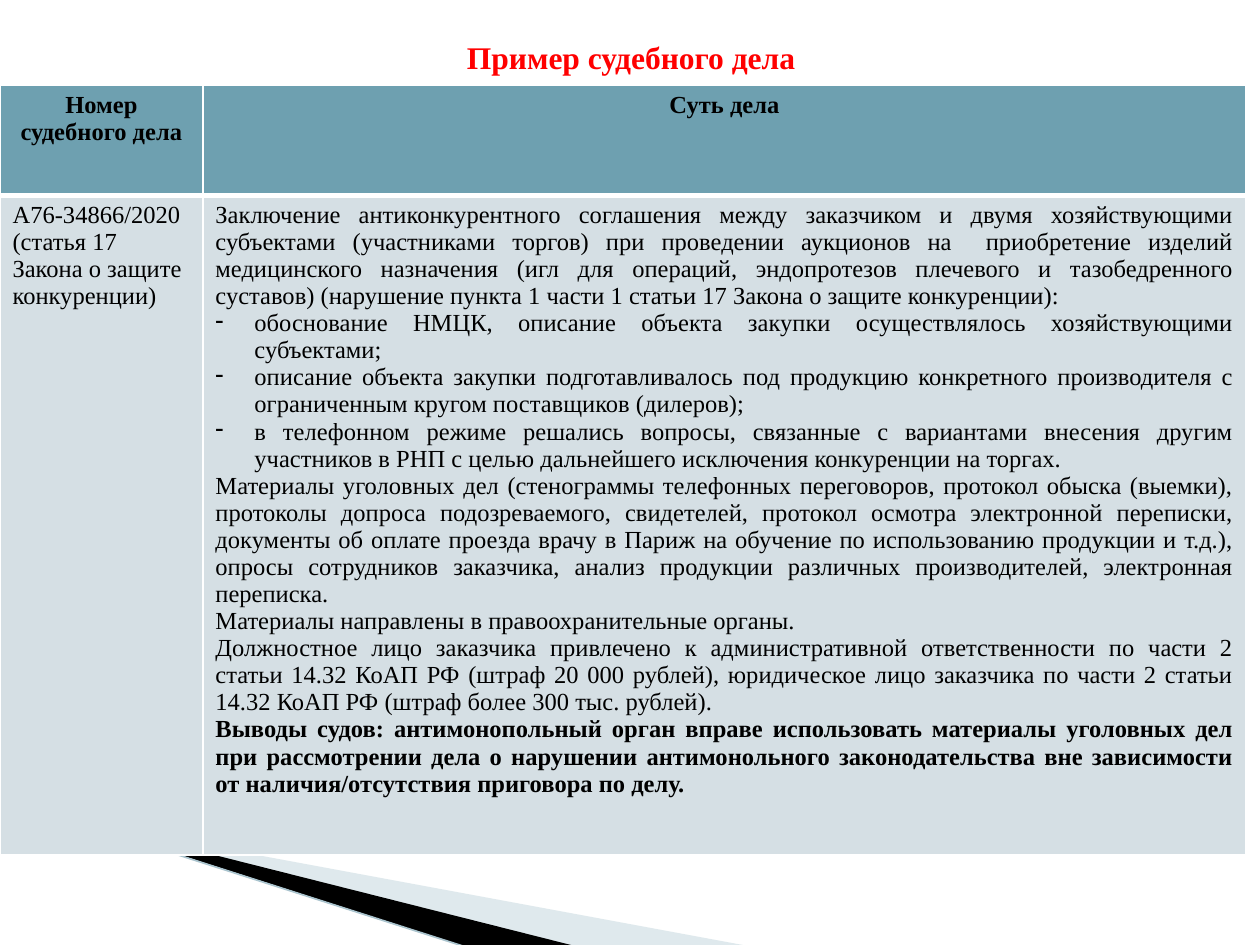
from lxml.etree import SubElement
from pptx import Presentation
from pptx.dml.color import RGBColor
from pptx.enum.shapes import MSO_CONNECTOR
from pptx.enum.text import MSO_ANCHOR, PP_ALIGN
from pptx.oxml.ns import qn
from pptx.util import Inches, Pt

FONT = "Times New Roman"
COLORS = {
    "title": "FF0000",
    "text": "000000",
    "header": "6EA0B0",
    "body": "D5DFE4",
    "border": "FFFFFF",
    "pale_ray": "B1C9D2",
    "dark_ray": "000000",
    "edge": "AAC4CE",
}

HEADERS = ["Номер судебного дела", "Суть дела"]
CASE_NUMBER = ["А76-34866/2020", "(статья 17 Закона о защите конкуренции)"]
CASE_INTRO = [
    "Заключение антиконкурентного соглашения между заказчиком и двумя хозяйствующими субъектами "
    "(участниками торгов) при проведении аукционов на  приобретение изделий медицинского назначения "
    "(игл для операций, эндопротезов плечевого и тазобедренного суставов) "
    "(нарушение пункта 1 части 1 статьи 17 Закона о защите конкуренции):",
]
CASE_POINTS = [
    "обоснование НМЦК, описание объекта закупки осуществлялось хозяйствующими субъектами;",
    "описание объекта закупки подготавливалось под продукцию конкретного производителя "
    "с ограниченным кругом поставщиков (дилеров);",
    "в телефонном режиме решались вопросы, связанные с вариантами внесения другим участников в РНП "
    "с целью дальнейшего исключения конкуренции на торгах.",
]
CASE_EVIDENCE = [
    "Материалы уголовных дел (стенограммы телефонных переговоров, протокол обыска (выемки), "
    "протоколы допроса подозреваемого, свидетелей, протокол осмотра электронной переписки, "
    "документы об оплате проезда врачу в Париж на обучение по использованию продукции и т.д.), "
    "опросы сотрудников заказчика, анализ продукции различных производителей, электронная переписка.",
    "Материалы направлены в правоохранительные органы.",
    "Должностное лицо заказчика привлечено к административной ответственности по части 2 "
    "статьи 14.32 КоАП РФ (штраф 20 000 рублей), юридическое лицо заказчика по части 2 "
    "статьи 14.32 КоАП РФ (штраф более 300 тыс. рублей).",
]
CASE_CONCLUSION = [
    "Выводы судов: антимонопольный орган вправе использовать материалы уголовных дел "
    "при рассмотрении дела о нарушении антимонольного законодательства вне зависимости "
    "от наличия/отсутствия приговора по делу.",
]


def rgb(name):
    return RGBColor.from_string(COLORS[name])


def add_paragraphs(text_frame, texts, size=14, color="text", bold=False,
                   align=PP_ALIGN.LEFT, bullet=None):
    for text in texts:
        paragraph = text_frame.paragraphs[-1]
        if paragraph.runs:
            paragraph = text_frame.add_paragraph()
        paragraph.alignment = align
        if bullet:
            properties = paragraph._p.get_or_add_pPr()
            properties.set("marL", str(Inches(0.31)))
            properties.set("indent", str(-Inches(0.31)))
            SubElement(properties, qn("a:buFontTx"))
            SubElement(properties, qn("a:buChar"), char=bullet)
        run = paragraph.add_run()
        run.text = text
        run.font.name = FONT
        run.font.size = Pt(size)
        run.font.bold = bold
        run.font.color.rgb = rgb(color)


def add_ray(slide, points, color, opacity=100):
    corners = [(Inches(x), Inches(y)) for x, y in points]
    builder = slide.shapes.build_freeform(*corners[0])
    builder.add_line_segments(corners[1:], close=True)
    shape = builder.convert_to_shape()
    shape.shadow.inherit = False
    shape.line.fill.background()
    shape.fill.solid()
    shape.fill.fore_color.rgb = rgb(color)
    if opacity < 100:
        color_element = shape._element.spPr.find(f"{qn('a:solidFill')}/{qn('a:srgbClr')}")
        SubElement(color_element, qn("a:alpha"), val=str(opacity * 1000))


def add_edge(slide, start, end):
    connector = slide.shapes.add_connector(
        MSO_CONNECTOR.STRAIGHT, *[Inches(value) for value in start + end])
    connector.line.color.rgb = rgb("edge")
    connector.line.width = Pt(0.95)
    SubElement(connector._element.spPr, qn("a:effectLst"))


def add_title(slide, text):
    box = slide.shapes.add_textbox(Inches(0.51), Inches(0.02), Inches(9), Inches(0.61))
    frame = box.text_frame
    frame.word_wrap = True
    frame.vertical_anchor = MSO_ANCHOR.BOTTOM
    frame.margin_bottom = Inches(0.03)
    add_paragraphs(frame, [text], size=18, color="title", bold=True, align=PP_ALIGN.CENTER)


def style_cell(cell, fill, top=1, bottom=1):
    properties = cell._tc.get_or_add_tcPr()
    for side, width in {"L": 1, "R": 1, "T": top, "B": bottom}.items():
        line = SubElement(properties, qn(f"a:ln{side}"), w=str(Pt(width)))
        line_fill = SubElement(line, qn("a:solidFill"))
        SubElement(line_fill, qn("a:srgbClr"), val=COLORS["border"])
    cell.fill.solid()
    cell.fill.fore_color.rgb = rgb(fill)


def add_case_table(slide):
    widths, heights = [1.61, 8.28], [0.87, 5.04]
    table = slide.shapes.add_table(
        2, 2, Inches(0), Inches(0.68), Inches(sum(widths)), Inches(sum(heights))).table
    for column, width in zip(table.columns, widths):
        column.width = Inches(width)
    for row, height in zip(table.rows, heights):
        row.height = Inches(height)

    # Header row
    for index, header in enumerate(HEADERS):
        cell = table.cell(0, index)
        style_cell(cell, "header", bottom=3)
        add_paragraphs(cell.text_frame, [header], bold=True, align=PP_ALIGN.CENTER)
        style_cell(table.cell(1, index), "body", top=3)

    # Case row
    add_paragraphs(table.cell(1, 0).text_frame, CASE_NUMBER)
    summary = table.cell(1, 1).text_frame
    justify = PP_ALIGN.JUSTIFY
    add_paragraphs(summary, CASE_INTRO, align=justify)
    add_paragraphs(summary, CASE_POINTS, align=justify, bullet="-")
    add_paragraphs(summary, CASE_EVIDENCE, align=justify)
    add_paragraphs(summary, CASE_CONCLUSION, align=justify, bold=True)


def main():
    presentation = Presentation()
    presentation.slide_width = Inches(10)
    presentation.slide_height = Inches(7.5)
    slide = presentation.slides.add_slide(presentation.slide_layouts[6])

    # Rays at the bottom
    add_ray(slide, [(0.55, 6.51), (5.95, 7.51), (4.56, 7.51), (0.55, 6.5)],
            "pale_ray", opacity=40)
    add_ray(slide, [(0.53, 6.49), (4.57, 7.51), (3.72, 7.52), (0.54, 6.5)], "dark_ray")
    add_edge(slide, (-0.01, 6.33), (3.71, 7.52))

    # Title and table
    add_title(slide, "Пример судебного дела")
    add_case_table(slide)
    presentation.save("out.pptx")


if __name__ == "__main__":
    main()
